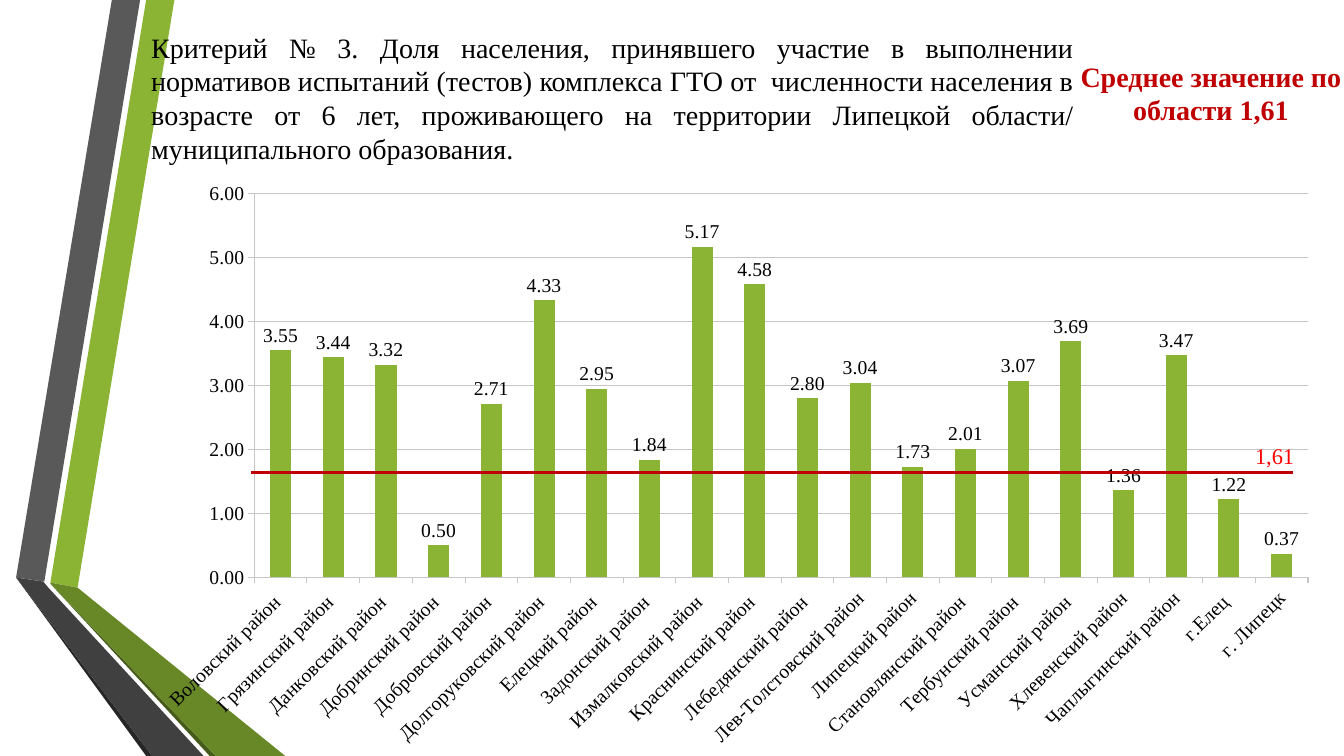
from dataclasses import dataclass

from lxml import etree
from pptx import Presentation
from pptx.chart import data as chart_data
from pptx.dml import color as dml
from pptx.enum import chart as chart_enum, shapes as shape_enum, text as text_enum
from pptx.oxml import ns
from pptx.util import Inches, Pt

FONT = "Times New Roman"
BLACK, GREEN, GRID, DARK_RED, RED = "000000", "8BB434", "C5C5C5", "C00000", "FF0000"
ALIGN = text_enum.PP_ALIGN


@dataclass
class Ribbon:
    color: str
    corners: list[tuple[float, float]]


@dataclass
class District:
    name: str
    share: float


RIBBONS = [
    Ribbon(GREEN, [(0.5, 5.78), (0.77, 5.83), (1.73, 0), (1.45, 0)]),
    Ribbon("595959", [(1.39, 0), (1.11, 0), (0.16, 5.73), (0.44, 5.77)]),
    Ribbon("262626", [(0.16, 5.73), (1.45, 7.5), (1.51, 7.5)]),
    Ribbon("465A1A", [(0.5, 5.79), (2.08, 7.5), (2.14, 7.5)]),
    Ribbon("688727", [(0.5, 5.79), (2.14, 7.5), (2.83, 7.5), (0.77, 5.83), (0.5, 5.78)]),
    Ribbon("404040", [(2.02, 7.5), (0.48, 5.83), (0.43, 5.77), (0.16, 5.73), (1.51, 7.5)]),
]

DISTRICTS = [
    District("Воловский район ", 3.55),
    District("Грязинский район ", 3.44),
    District("Данковский район ", 3.32),
    District("Добринский район ", 0.5),
    District("Добровский район ", 2.71),
    District("Долгоруковский район ", 4.33),
    District("Елецкий район ", 2.95),
    District("Задонский район ", 1.84),
    District("Измалковский район ", 5.17),
    District("Краснинский район ", 4.58),
    District("Лебедянский район ", 2.8),
    District("Лев-Толстовский район", 3.04),
    District("Липецкий район", 1.73),
    District("Становлянский район ", 2.01),
    District("Тербунский район ", 3.07),
    District("Усманский район ", 3.69),
    District("Хлевенский район", 1.36),
    District("Чаплыгинский район", 3.47),
    District("г.Елец ", 1.22),
    District("г. Липецк", 0.37),
]


def rgb(color: str) -> dml.RGBColor:
    return dml.RGBColor.from_string(color)


def style_font(font, size: float, color: str = BLACK, bold: bool = False) -> None:
    font.name, font.size, font.bold = FONT, Pt(size), bold
    font.color.rgb = rgb(color)


def style_line(line, color: str, width: float) -> None:
    line.color.rgb = rgb(color)
    line.width = Pt(width)


def place(shape, left: float, top: float, width: float, height: float) -> None:
    shape.left, shape.top = Inches(left), Inches(top)
    shape.width, shape.height = Inches(width), Inches(height)


def write(shape, content: str, *, size: float, color: str = BLACK,
          bold: bool = False, align=ALIGN.LEFT) -> None:
    frame = shape.text_frame
    frame.word_wrap = True
    frame.auto_size = text_enum.MSO_AUTO_SIZE.NONE
    frame.vertical_anchor = text_enum.MSO_ANCHOR.TOP
    paragraph = frame.paragraphs[0]
    paragraph.alignment = align
    run = paragraph.add_run()
    run.text = content
    style_font(run.font, size, color, bold)


def add_text(slide, box: tuple[float, float, float, float], content: str, **style) -> None:
    write(slide.shapes.add_textbox(*map(Inches, box)), content, **style)


def draw_ribbon(slide, ribbon: Ribbon) -> None:
    start, *rest = [(Inches(x), Inches(y)) for x, y in ribbon.corners]
    outline = slide.shapes.build_freeform(*start)
    outline.add_line_segments(rest, close=True)
    shape = outline.convert_to_shape()
    shape.shadow.inherit = False
    shape.fill.solid()
    shape.fill.fore_color.rgb = rgb(ribbon.color)
    shape.line.fill.background()


def set_plot_area(chart, **fractions: float) -> None:
    """Fix the inner plot area as fractions of the chart frame."""
    plot_area = chart.plots[0]._element.getparent()
    for old in plot_area.findall(ns.qn("c:layout")):
        plot_area.remove(old)
    layout = etree.Element(ns.qn("c:layout"))
    manual = etree.SubElement(layout, ns.qn("c:manualLayout"))
    settings = {"layoutTarget": "inner", "xMode": "edge", "yMode": "edge", **fractions}
    for tag, value in settings.items():
        etree.SubElement(manual, ns.qn(f"c:{tag}")).set("val", str(value))
    plot_area.insert(0, layout)


def add_district_chart(slide) -> None:
    shares = chart_data.CategoryChartData(number_format="0.00")
    shares.categories = [district.name for district in DISTRICTS]
    shares.add_series("Series 1", [district.share for district in DISTRICTS])
    chart = slide.shapes.add_chart(
        chart_enum.XL_CHART_TYPE.COLUMN_CLUSTERED,
        *map(Inches, (1.4, 1.7, 11.81, 5.83)), shares).chart
    chart.has_legend = chart.has_title = False
    style_font(chart.font, 12)
    set_plot_area(chart, x=0.095, y=0.038, w=0.885, h=0.653)

    for axis in (chart.category_axis, chart.value_axis):
        axis.major_tick_mark = chart_enum.XL_TICK_MARK.OUTSIDE
        style_font(axis.tick_labels.font, 14)
        style_line(axis.format.line, GRID, 0.75)
    names = chart.category_axis._element.find(ns.qn("c:txPr"))
    names.find(ns.qn("a:bodyPr")).set("rot", str(-45 * 60000))
    scale = chart.value_axis
    scale.minimum_scale, scale.maximum_scale, scale.major_unit = 0, 6, 1
    scale.has_major_gridlines = True
    style_line(scale.major_gridlines.format.line, GRID, 0.75)
    scale.tick_labels.number_format = "0.00"
    scale.tick_labels.number_format_is_linked = False

    columns = chart.plots[0]
    columns.gap_width = 150
    columns.vary_by_categories = False
    fill = columns.series[0].format.fill
    fill.solid()
    fill.fore_color.rgb = rgb(GREEN)
    columns.has_data_labels = True
    labels = columns.data_labels
    labels.show_value = True
    labels.position = chart_enum.XL_LABEL_POSITION.OUTSIDE_END
    labels.number_format, labels.number_format_is_linked = "0.00", False
    style_font(labels.font, 14)


def add_average_line(slide) -> None:
    average = slide.shapes.add_connector(
        shape_enum.MSO_CONNECTOR.STRAIGHT, *map(Inches, (2.49, 4.69, 12.82, 4.69)))
    style_line(average.line, DARK_RED, 1.75)
    etree.SubElement(average._element.spPr, ns.qn("a:effectLst"))


def main() -> None:
    deck = Presentation()
    deck.slide_width, deck.slide_height = Inches(13.33), Inches(7.5)
    slide = deck.slides.add_slide(deck.slide_layouts[5])

    # Ribbons on the left edge
    for ribbon in RIBBONS:
        draw_ribbon(slide, ribbon)

    # Share of residents by district
    add_district_chart(slide)

    # Criterion, brought in front of the ribbons
    criterion = slide.shapes.title
    place(criterion, 1.4, 0.25, 9.35, 1.45)
    write(criterion,
          "Критерий № 3. Доля населения, принявшего участие в выполнении нормативов "
          "испытаний (тестов) комплекса ГТО от  численности населения в возрасте от 6 лет, "
          "проживающего на территории Липецкой области/ муниципального образования.",
          size=20, align=ALIGN.JUSTIFY)
    criterion._element.getparent().append(criterion._element)

    # Regional average
    add_text(slide, (10.57, 0.54, 2.88, 0.77), "Среднее значение по области 1,61",
             size=20, color=DARK_RED, bold=True, align=ALIGN.CENTER)
    add_average_line(slide)
    add_text(slide, (12.35, 4.34, 0.67, 0.35), "1,61", size=16, color=RED)

    deck.save("out.pptx")


if __name__ == "__main__":
    main()
